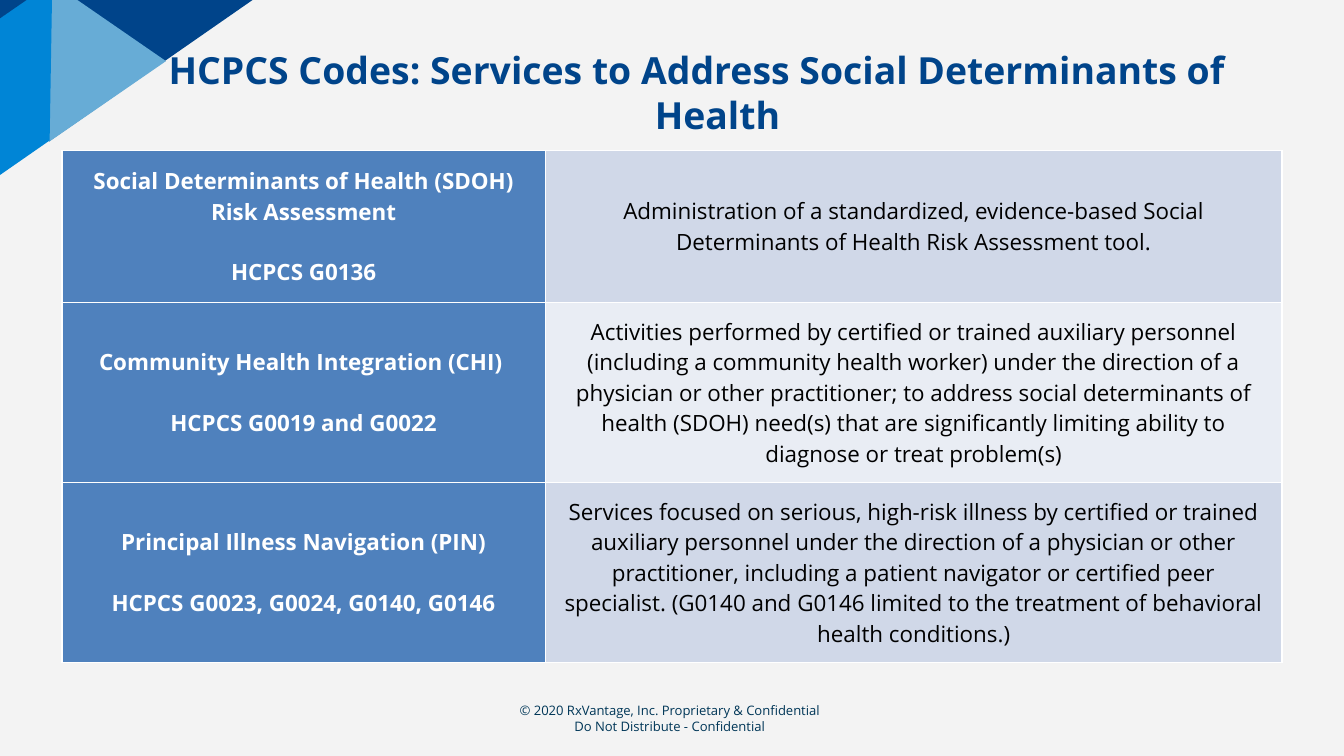
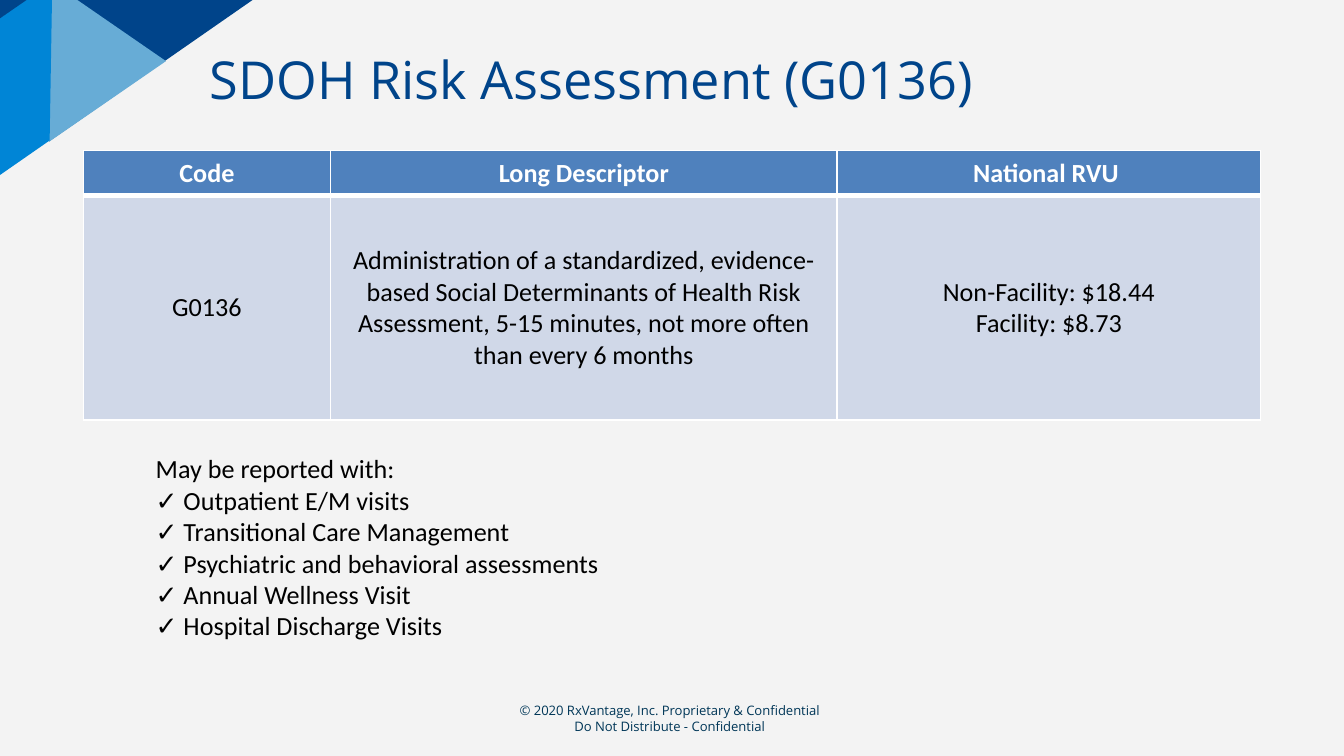
from lxml import etree
from pptx import Presentation
from pptx.dml.color import RGBColor
from pptx.enum.shapes import MSO_SHAPE
from pptx.enum.text import MSO_ANCHOR, MSO_AUTO_SIZE, PP_ALIGN
from pptx.oxml.ns import qn
from pptx.util import Inches, Pt

LEFT, MID = PP_ALIGN.LEFT, PP_ALIGN.CENTER
TOP, CENTER = MSO_ANCHOR.TOP, MSO_ANCHOR.MIDDLE
GROW, FIXED = MSO_AUTO_SIZE.SHAPE_TO_FIT_TEXT, MSO_AUTO_SIZE.NONE
SLANT, PEAK = MSO_SHAPE.PARALLELOGRAM, MSO_SHAPE.ISOSCELES_TRIANGLE

NAVY, SKY, AZURE = "00448A", "67ACD6", "0085D6"
PAPER, INK, WHITE, BLACK = "F3F3F3", "003657", "FFFFFF", "000000"
HEAD, BAND, PALE = "4F81BD", "D0D8E8", "E9EDF4"
SANS, BODY = "Open Sans", "Calibri"

CORNER = [
    (SLANT, -0.45, -1.55, 5.48, 1.14, 145.2, 0.72, NAVY),
    (PEAK, 0.2, 0.02, 1.2, 0.87, 90, 0.5, SKY),
    (SLANT, -2.06, 0.63, 2.99, 0.96, 145.2, 0.72, AZURE),
    (PEAK, -1.14, -0.82, 1.82, 1.32, 90, 0.5, NAVY),
]
FOOTER = ("© 2020 RxVantage, Inc. Proprietary & Confidential \n"
          "Do Not Distribute - Confidential ")
REPORT = """May be reported with:
✓ Outpatient E/M visits
✓ Transitional Care Management
✓ Psychiatric and behavioral assessments
✓ Annual Wellness Visit
✓ Hospital Discharge Visits"""

CODES = [
    ["Social Determinants of Health (SDOH) Risk Assessment\nHCPCS G0136",
     "Administration of a standardized, evidence-based Social Determinants "
     "of Health Risk Assessment tool."],
    ["Community Health Integration (CHI) \nHCPCS G0019 and G0022",
     "Activities performed by certified or trained auxiliary personnel "
     "(including a community health worker) under the direction of a "
     "physician or other practitioner; to address social determinants of "
     "health (SDOH) need(s) that are significantly limiting ability to "
     "diagnose or treat problem(s)"],
    ["Principal Illness Navigation (PIN)\nHCPCS G0023, G0024, G0140, G0146",
     "Services focused on serious, high-risk illness by certified or trained "
     "auxiliary personnel under the direction of a physician or other "
     "practitioner, including a patient navigator or certified peer "
     "specialist. (G0140 and G0146 limited to the treatment of behavioral "
     "health conditions.)"],
]
RATES = [
    ["Code", "Long Descriptor", "National RVU "],
    ["G0136",
     "Administration of a standardized, evidence-based Social Determinants "
     "of Health Risk Assessment, 5-15 minutes, not more often than every "
     "6 months",
     "Non-Facility: $18.44\nFacility: $8.73"],
]
SLIDES = [
    dict(title="HCPCS Codes: Services to Address Social Determinants of Health ",
         left=1.09, size=20, bold=True, align=MID, rows=CODES, x=0.46,
         wide=[3.6, 5.48], high=[1.13, 1.34, 1.34], font=SANS, text=12,
         gap=16.3, rule=1, fills=[[HEAD, BAND], [HEAD, PALE], [HEAD, BAND]]),
    dict(title="SDOH Risk Assessment (G0136)",
         left=1.46, size=28, bold=False, align=LEFT, rows=RATES, x=0.62,
         wide=[1.84, 3.77, 3.15], high=[0.33, 1.67], font=BODY, text=14,
         gap=0, rule=3, fills=[[HEAD] * 3, [BAND] * 3]),
]


def hue(code):
    return RGBColor.from_string(code)


def write(frame, text, font=SANS, size=12, color=BLACK, bold=False,
          align=LEFT, gap=0, hang=0):
    frame.word_wrap = True
    for i, part in enumerate(text.split("\n")):
        para = frame.paragraphs[0] if i == 0 else frame.add_paragraph()
        para.alignment = align
        para.space_before = Pt(gap if i else 0)
        if hang:
            props = para._p.get_or_add_pPr()
            props.set("marL", str(Inches(hang)))
            props.set("indent", str(-Inches(hang)))
        run = para.add_run()
        run.text = part
        run.font.name = font
        run.font.size = Pt(size)
        run.font.bold = bold
        run.font.color.rgb = hue(color)


deck = Presentation()
deck.slide_width = Inches(10)
deck.slide_height = deck.slide_width * 9 // 16

for item in SLIDES:
    slide = deck.slides.add_slide(deck.slide_layouts[5])
    slide.background.fill.solid()
    slide.background.fill.fore_color.rgb = hue(PAPER)

    for kind, x, y, w, h, turn, bend, color in CORNER:
        facet = slide.shapes.add_shape(
            kind, Inches(x), Inches(y), Inches(w), Inches(h))
        facet.rotation = turn
        facet.adjustments[0] = bend
        facet.shadow.inherit = False
        facet.fill.solid()
        facet.fill.fore_color.rgb = hue(color)
        facet.line.fill.background()

    foot = slide.shapes.add_textbox(
        Inches(3.44), Inches(5.13), Inches(3.11), Inches(0.35))
    write(foot.text_frame, FOOTER, size=7, color=INK, align=MID)

    title = slide.shapes.title
    slide.shapes._spTree.append(title._element)
    title.left, title.top = Inches(item["left"]), Inches(0.25)
    title.width, title.height = Inches(8.19), Inches(0.87)
    title.text_frame.vertical_anchor = TOP
    title.text_frame.auto_size = FIXED
    write(title.text_frame, item["title"], size=item["size"], color=NAVY,
          bold=item["bold"], align=item["align"], hang=0.38)

    for frame in (foot.text_frame, title.text_frame):
        frame.margin_left = frame.margin_right = Inches(0.1)
        frame.margin_top = frame.margin_bottom = Inches(0.1)

    rows, wide, high = item["rows"], item["wide"], item["high"]
    grid = slide.shapes.add_table(
        len(rows), len(wide), Inches(item["x"]), Inches(1.12),
        Inches(sum(wide)), Inches(sum(high))).table
    grid.first_row = grid.horz_banding = False
    for col, width in zip(grid.columns, wide):
        col.width = Inches(width)
    for r, row in enumerate(rows):
        grid.rows[r].height = Inches(high[r])
        for c, text in enumerate(row):
            cell = grid.cell(r, c)
            fill = item["fills"][r][c]
            head = fill == HEAD
            cell.vertical_anchor = CENTER
            write(cell.text_frame, text, font=item["font"], size=item["text"],
                  color=WHITE if head else BLACK, bold=head, align=MID,
                  gap=item["gap"])
            props = cell._tc.get_or_add_tcPr()
            for side in ("lnL", "lnR", "lnT", "lnB"):
                inner = (side, r) in (("lnB", 0), ("lnT", 1))
                edge = etree.SubElement(props, qn("a:" + side))
                edge.set("w", str(Pt(item["rule"] if inner else 1)))
                paint = etree.SubElement(edge, qn("a:solidFill"))
                etree.SubElement(paint, qn("a:srgbClr")).set("val", WHITE)
            cell.fill.solid()
            cell.fill.fore_color.rgb = hue(fill)

note = slide.shapes.add_textbox(
    Inches(1.06), Inches(3.32), Inches(7.09), Inches(1.51))
note.text_frame.auto_size = GROW
write(note.text_frame, REPORT, font=BODY, size=14)

deck.save("out.pptx")
